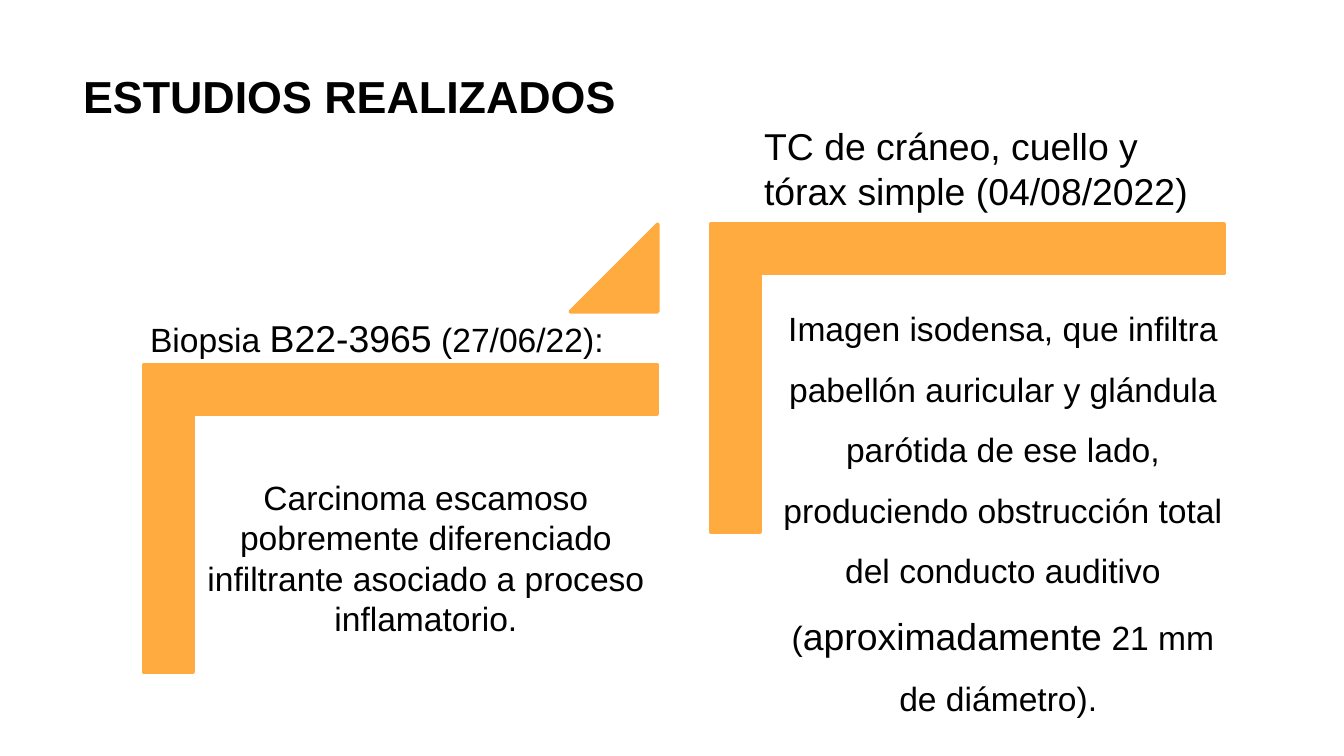
import pptx
import pptx.util
import pptx.dml.color
import pptx.enum.shapes
import pptx.enum.text

PX = 5715
FONT = "Arial"
COLORS = {"accent": "FFAB40", "text": "000000", "background": "FFFFFF"}
SHAPE = pptx.enum.shapes.MSO_SHAPE
ALIGN = pptx.enum.text.PP_ALIGN
ANCHOR = pptx.enum.text.MSO_ANCHOR
AUTO = pptx.enum.text.MSO_AUTO_SIZE


def rgb(name):
    """Return the named colour."""
    return pptx.dml.color.RGBColor.from_string(COLORS[name])


def px(*values):
    """Turn px lengths into EMU."""
    return [pptx.util.Emu(round(v * PX)) for v in values]


def style_run(r, size, bold=False):
    """Format one run."""
    r.font.name = FONT
    r.font.size = pptx.util.Pt(size)
    r.font.bold = bold
    r.font.color.rgb = rgb("text")


def add_title(slide, box, text):
    """Place and format the title placeholder."""
    s = slide.shapes.title
    s.left, s.top, s.width, s.height = px(*box)
    tf = s.text_frame
    tf.margin_left, tf.margin_top, tf.margin_right, tf.margin_bottom = px(16, 16, 16, 16)
    tf.vertical_anchor = ANCHOR.MIDDLE
    tf.word_wrap = True
    tf.text = text
    p = tf.paragraphs[0]
    p.alignment = ALIGN.CENTER
    style_run(p.runs[0], 24, bold=True)


def add_text(slide, box, paragraphs, align=ALIGN.LEFT, spacing=1.0, wrap=True,
             margins=(16, 8, 16, 8), auto=AUTO.SHAPE_TO_FIT_TEXT):
    """Add a text box whose paragraphs are lists of (text, size) runs."""
    tf = slide.shapes.add_textbox(*px(*box)).text_frame
    tf.word_wrap = wrap
    tf.auto_size = auto
    tf.margin_left, tf.margin_top, tf.margin_right, tf.margin_bottom = px(*margins)
    for i, runs in enumerate(paragraphs):
        p = tf.add_paragraph() if i else tf.paragraphs[0]
        p.alignment = align
        p.line_spacing = spacing
        for text, size in runs:
            r = p.add_run()
            r.text = text
            style_run(r, size)


def add_accent(slide, kind, box, adjustments, rotation=0):
    """Add a solid accent shape."""
    s = slide.shapes.add_shape(kind, *px(*box))
    s.rotation = rotation
    for i, value in enumerate(adjustments):
        s.adjustments[i] = value
    s.shadow.inherit = False
    s.fill.solid()
    s.fill.fore_color.rgb = rgb("accent")
    s.line.color.rgb = rgb("accent")
    s.line.width = pptx.util.Pt(2)


def add_study(slide, box, heading, heading_box, heading_spacing, body, body_box, **body_format):
    """Draw one step: bracket filling the box, heading above it, findings inside."""
    x, y, w, h = box
    add_accent(slide, SHAPE.CORNER, (x + (w - h) / 2, y - (w - h) / 2, h, w),
               (0.16, 0.16), rotation=90)
    for paragraphs, (dx, dy, bw, bh), options in (
        (heading, heading_box, {"wrap": False, "spacing": heading_spacing}),
        (body, body_box, {"align": ALIGN.CENTER, **body_format}),
    ):
        add_text(slide, (x + dx, y + dy, bw, bh), paragraphs, **options)


def main():
    """Build the slide and save it."""
    prs = pptx.Presentation()
    prs.slide_width, prs.slide_height = px(1600, 900)
    slide = prs.slides.add_slide(prs.slide_layouts[5])
    slide.background.fill.solid()
    slide.background.fill.fore_color.rgb = rgb("background")
    add_title(slide, (-27, 40, 886, 147), "ESTUDIOS REALIZADOS")
    add_study(
        slide, (171, 434, 611, 366),
        [[("Biopsia ", 18), ("B22-3965", 20), (" (27/06/22):", 18)]],
        (-8, -60, 578, 64), 0.9,
        [[("Carcinoma escamoso pobremente diferenciado infiltrante asociado "
           "a proceso inflamatorio.", 18)]],
        (61, 60, 550, 483), margins=(11, 74, 11, 11), auto=AUTO.NONE,
    )
    add_accent(slide, SHAPE.ISOSCELES_TRIANGLE, (679, 267, 104, 104), (1,))
    add_study(
        slide, (846, 267, 611, 366),
        [[("TC de cráneo, cuello y", 20)], [("tórax simple (04/08/2022)", 20)]],
        (48, -128, 541, 123), 1.0,
        [[("Imagen isodensa, que infiltra pabellón auricular y glándula parótida "
           "de ese lado, produciendo obstrucción total del conducto auditivo (", 18),
          ("aproximadamente", 20), (" 21 mm de diámetro). ", 18)]],
        (63, 68, 570, 525), spacing=1.5,
    )
    prs.save("out.pptx")


if __name__ == "__main__":
    main()
